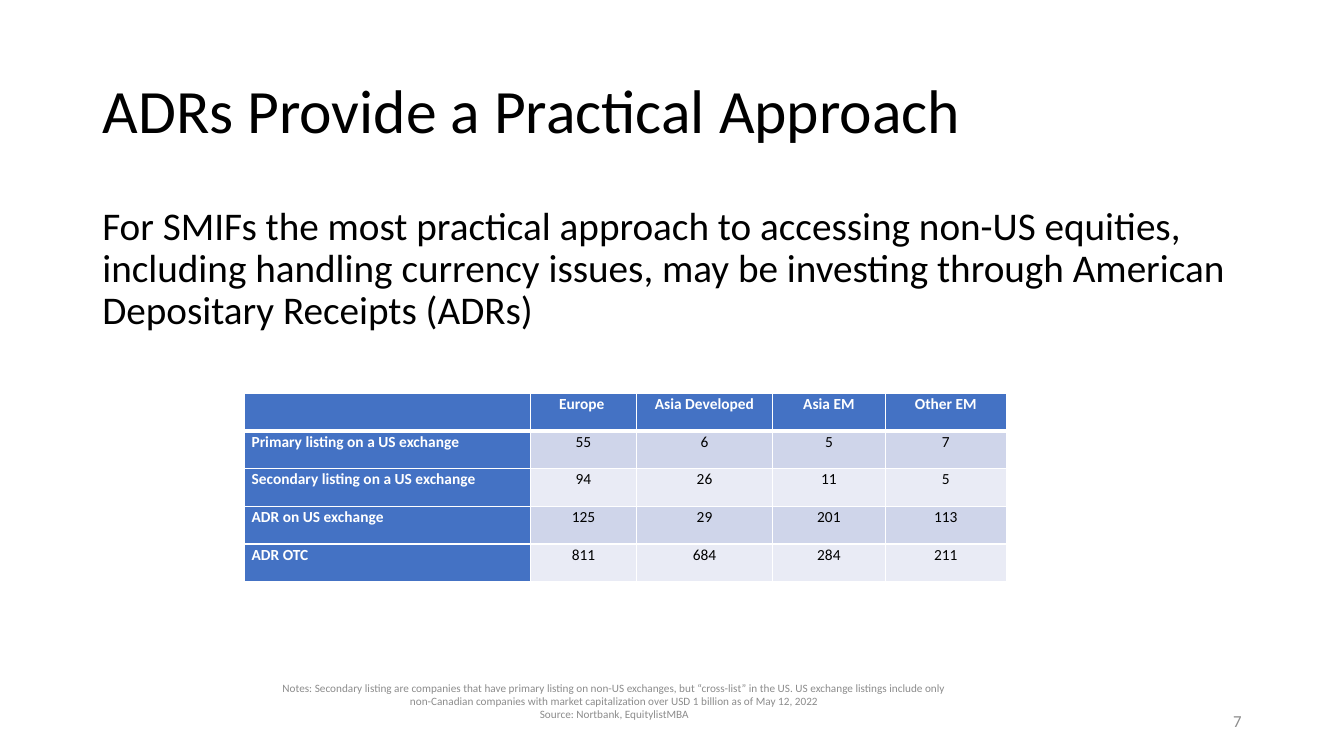
from dataclasses import dataclass

from lxml import etree
from pptx import Presentation
from pptx.dml.color import RGBColor
from pptx.enum import text
from pptx.oxml import ns
from pptx.util import Cm, Pt


@dataclass(frozen=True)
class Theme:
    font: str = "Calibri"
    ink: str = "000000"
    paper: str = "FFFFFF"
    muted: str = "8C8C8C"
    accent: str = "4472C4"
    bands: tuple = ("CFD5EA", "E9EBF5")
    title_size: int = 44
    body_size: int = 28
    page_size: int = 12
    table_size: int = 11
    note_size: int = 8
    rule: int = 1
    header_rule: int = 3


THEME = Theme()

LISTINGS = [
    ("", "Europe ", "Asia Developed", "Asia EM", "Other EM"),
    ("Primary listing on a US exchange", 55, 6, 5, 7),
    ("Secondary listing on a US exchange", 94, 26, 11, 5),
    ("ADR on US exchange", 125, 29, 201, 113),
    ("ADR OTC", 811, 684, 284, 211),
]
COLUMN_WIDTHS = (7.21, 2.67, 3.43, 2.84, 3.05)


def format_text(frame, size, color, align, spacing=1.0, bold=False):
    for paragraph in frame.paragraphs:
        paragraph.alignment = align
        paragraph.line_spacing = spacing
        for run in paragraph.runs:
            run.font.name = THEME.font
            run.font.size = Pt(size)
            run.font.bold = bold
            run.font.color.rgb = RGBColor.from_string(color)


def add_title(slide, left, top, width, height):
    title = slide.shapes.title
    title.left, title.top, title.width, title.height = map(Cm, (left, top, width, height))
    frame = title.text_frame
    frame.text = "ADRs Provide a Practical Approach"
    frame.auto_size = text.MSO_AUTO_SIZE.NONE
    frame.vertical_anchor = text.MSO_ANCHOR.MIDDLE
    format_text(frame, THEME.title_size, THEME.ink, text.PP_ALIGN.LEFT, 0.9)


def add_text(slide, box, wording, anchor):
    frame = slide.shapes.add_textbox(*map(Cm, box)).text_frame
    frame.word_wrap = True
    frame.vertical_anchor = anchor
    frame.text = wording
    return frame


def add_message(slide, *box):
    message = add_text(
        slide, box,
        "For SMIFs the most practical approach to accessing non-US equities, "
        "including handling currency issues, may be investing through American "
        "Depositary Receipts (ADRs)",
        text.MSO_ANCHOR.TOP)
    message.paragraphs[0].space_before = Pt(10)
    format_text(message, THEME.body_size, THEME.ink, text.PP_ALIGN.LEFT, 0.9)


def add_borders(cell, top, bottom):
    properties = cell._tc.get_or_add_tcPr()
    sides = {"lnL": THEME.rule, "lnR": THEME.rule, "lnT": top, "lnB": bottom}
    for position, (side, width) in enumerate(sides.items()):
        line = etree.Element(ns.qn(f"a:{side}"), w=str(Pt(width)))
        fill = etree.SubElement(line, ns.qn("a:solidFill"))
        etree.SubElement(fill, ns.qn("a:srgbClr"), val=THEME.paper)
        properties.insert(position, line)


def add_listings(slide, left, top, width, height):
    listings = slide.shapes.add_table(
        len(LISTINGS), len(COLUMN_WIDTHS), *map(Cm, (left, top, width, height))).table
    for column, share in zip(listings.columns, COLUMN_WIDTHS):
        column.width = Cm(width * share / sum(COLUMN_WIDTHS))
    for r, values in enumerate(LISTINGS):
        listings.rows[r].height = Cm(height / len(LISTINGS))
        for c, value in enumerate(values):
            cell = listings.cell(r, c)
            heading = r == 0 or c == 0
            cell.margin_left = cell.margin_right = Cm(0.18)
            cell.margin_top = cell.margin_bottom = 0
            cell.text = str(value)
            cell.fill.solid()
            cell.fill.fore_color.rgb = RGBColor.from_string(
                THEME.accent if heading else THEME.bands[(r - 1) % 2])
            format_text(cell.text_frame, THEME.table_size,
                        THEME.paper if heading else THEME.ink,
                        text.PP_ALIGN.CENTER if c else text.PP_ALIGN.LEFT,
                        1.07, heading)
            add_borders(cell,
                        THEME.header_rule if r == 1 else THEME.rule,
                        THEME.header_rule if r == 0 else THEME.rule)


def add_notes_line(slide, *box):
    notes = add_text(
        slide, box,
        "Notes: Secondary listing are companies that have primary listing on "
        "non-US exchanges, but “cross-list” in the US. US exchange listings include "
        "only non-Canadian companies with market capitalization over USD 1 billion "
        "as of May 12, 2022\nSource: Nortbank, EquitylistMBA",
        text.MSO_ANCHOR.TOP)
    notes.margin_top = 0
    format_text(notes, THEME.note_size, THEME.muted, text.PP_ALIGN.CENTER)


def add_page_number(slide, *box):
    number = add_text(slide, box, "7", text.MSO_ANCHOR.MIDDLE)
    format_text(number, THEME.page_size, THEME.muted, text.PP_ALIGN.RIGHT)


def main():
    deck = Presentation()
    deck.slide_width, deck.slide_height = Cm(33.87), Cm(19.05)
    slide = deck.slides.add_slide(deck.slide_layouts[5])
    margin, content_width = 2.33, 29.21
    add_title(slide, margin, 1.01, content_width, 3.68)
    add_message(slide, margin, 5.07, content_width, 12.09)
    add_listings(slide, 6.16, 9.91, sum(COLUMN_WIDTHS), 4.75)
    add_notes_line(slide, 6.76, 17.16, 17.45, 1.52)
    add_page_number(slide, 23.92, 17.66, 7.62, 1.01)
    deck.save("out.pptx")


if __name__ == "__main__":
    main()
